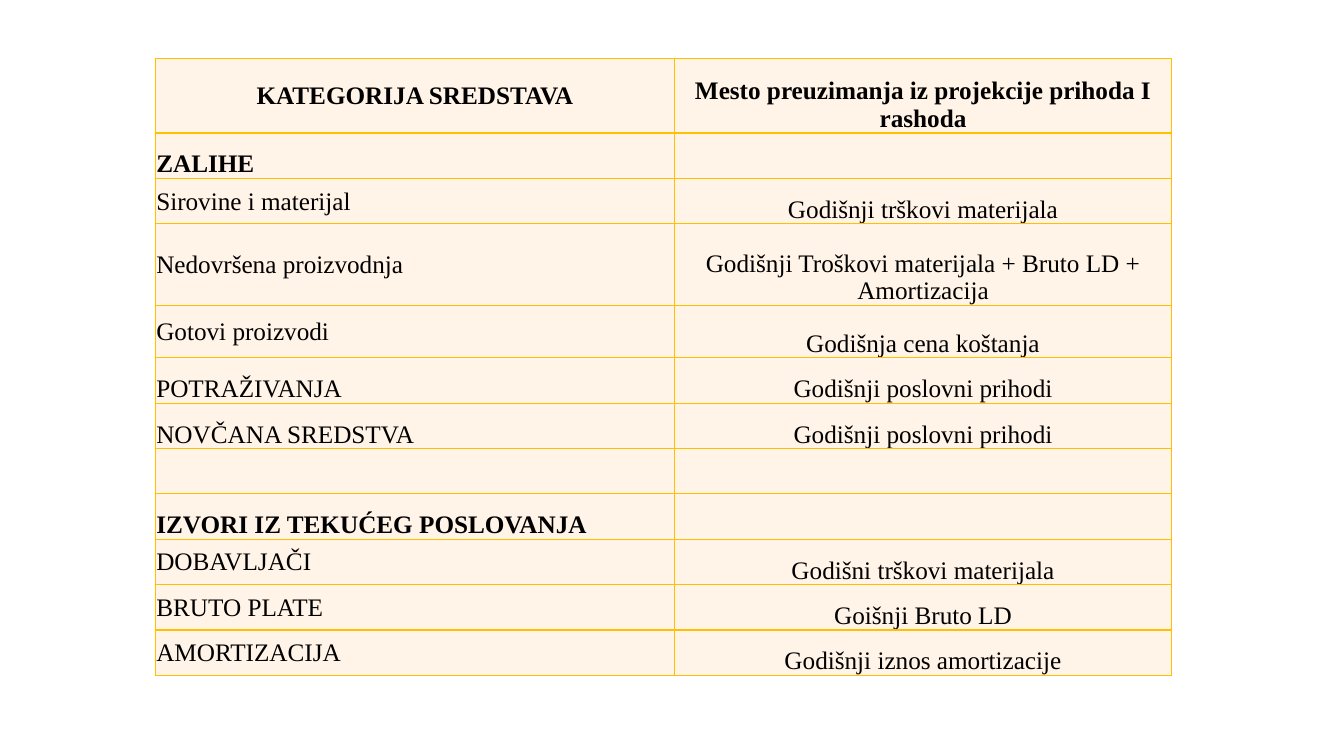
from lxml import etree
from pptx import Presentation
from pptx.dml.color import RGBColor
from pptx.enum import text
from pptx.oxml import ns
from pptx.util import Inches, Pt

COLORS = {"cell": "FFF4E7", "border": "FFC000", "text": "000000"}
FONT = "Times New Roman"
MIDDLE, BOTTOM = text.MSO_ANCHOR.MIDDLE, text.MSO_ANCHOR.BOTTOM
COLUMN_WIDTHS = [5.15, 4.93]
ROW_HEIGHT = 0.45

# Category, where it is taken from, anchor of the category, bold, row height
ROWS = [
    ("KATEGORIJA SREDSTAVA", "Mesto preuzimanja iz projekcije prihoda I rashoda", MIDDLE, True, 0.74),
    ("ZALIHE", "", BOTTOM, True, ROW_HEIGHT),
    ("Sirovine i materijal", "Godišnji trškovi materijala", MIDDLE, False, ROW_HEIGHT),
    ("Nedovršena proizvodnja", "Godišnji Troškovi materijala + Bruto LD + Amortizacija", MIDDLE, False, 0.81),
    ("Gotovi proizvodi", "Godišnja cena koštanja", MIDDLE, False, 0.52),
    ("POTRAŽIVANJA", "Godišnji poslovni prihodi", BOTTOM, False, ROW_HEIGHT),
    ("NOVČANA SREDSTVA", "Godišnji poslovni prihodi", BOTTOM, False, ROW_HEIGHT),
    ("", "", BOTTOM, False, ROW_HEIGHT),
    ("IZVORI IZ TEKUĆEG POSLOVANJA", "", BOTTOM, True, ROW_HEIGHT),
    ("DOBAVLJAČI", "Godišni trškovi materijala", MIDDLE, False, ROW_HEIGHT),
    ("BRUTO PLATE", "Goišnji Bruto LD", MIDDLE, False, ROW_HEIGHT),
    ("AMORTIZACIJA", "Godišnji iznos amortizacije", MIDDLE, False, ROW_HEIGHT),
]


def add_borders(cell):
    properties = cell._tc.get_or_add_tcPr()
    for side in ("a:lnL", "a:lnR", "a:lnT", "a:lnB"):
        line = etree.SubElement(properties, ns.qn(side), w=str(Pt(1)))
        fill = etree.SubElement(line, ns.qn("a:solidFill"))
        etree.SubElement(fill, ns.qn("a:srgbClr"), val=COLORS["border"])


presentation = Presentation()
presentation.slide_width = Inches(13.33)
presentation.slide_height = Inches(7.5)
slide = presentation.slides.add_slide(presentation.slide_layouts[6])

table = slide.shapes.add_table(
    len(ROWS), len(COLUMN_WIDTHS), Inches(1.54), Inches(0.58),
    Inches(sum(COLUMN_WIDTHS)), Inches(sum(row[-1] for row in ROWS)),
).table
table.first_row = False
table.horz_banding = False
for column, width in zip(table.columns, COLUMN_WIDTHS):
    column.width = Inches(width)

for row_index, (category, origin, anchor, bold, height) in enumerate(ROWS):
    table.rows[row_index].height = Inches(height)
    for column_index, words in enumerate((category, origin)):
        cell = table.cell(row_index, column_index)
        add_borders(cell)
        cell.fill.solid()
        cell.fill.fore_color.rgb = RGBColor.from_string(COLORS["cell"])
        cell.margin_left = cell.margin_right = cell.margin_top = Inches(0.01)
        cell.margin_bottom = 0
        cell.vertical_anchor = BOTTOM if column_index else anchor
        if not words:
            continue
        paragraph = cell.text_frame.paragraphs[0]
        centred = column_index == 1 or row_index == 0
        paragraph.alignment = text.PP_ALIGN.CENTER if centred else text.PP_ALIGN.LEFT
        run = paragraph.add_run()
        run.text = words
        run.font.name = FONT
        run.font.size = Pt(18)
        run.font.bold = bold
        run.font.color.rgb = RGBColor.from_string(COLORS["text"])

presentation.save("out.pptx")
